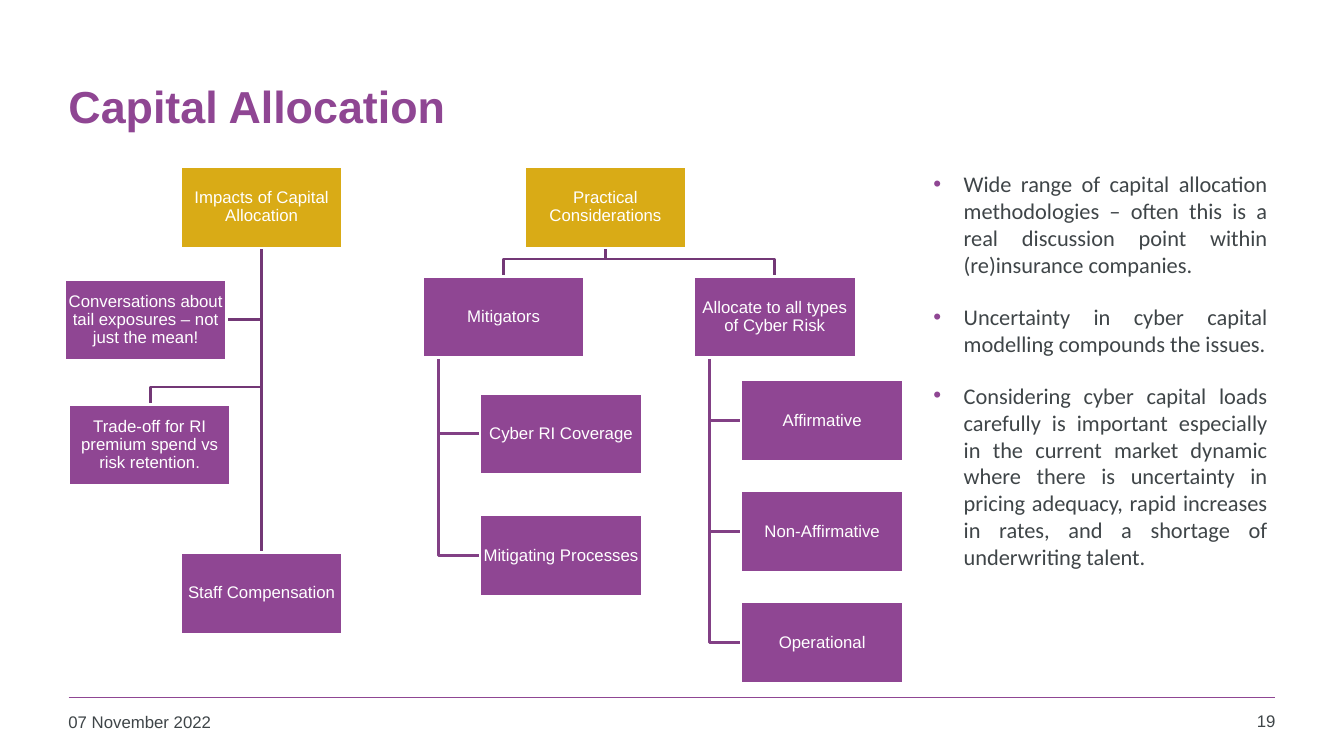
from lxml.etree import SubElement
from pptx import Presentation
from pptx.dml.color import RGBColor
from pptx.enum.shapes import MSO_CONNECTOR, MSO_SHAPE
from pptx.enum.text import MSO_ANCHOR, PP_ALIGN
from pptx.oxml.ns import qn
from pptx.util import Pt

PX = 9144
BOX_W, BOX_H = 161, 81
PURPLE, GOLD, WHITE, INK = "8F4693", "D9AB16", "FFFFFF", "3F4548"
BRANCH, TWIG = "733876", "824085"


def px(n):
    return n * PX


def rgb(color):
    return RGBColor.from_string(color)


class Deck:
    font = "Arial"

    def __init__(self, width, height):
        self.prs = Presentation()
        self.prs.slide_width, self.prs.slide_height = px(width), px(height)
        self.s = self.prs.slides.add_slide(self.prs.slide_layouts[6])

    def style(self, p, size, color, bold=False, font=None):
        for r in p.runs:
            r.font.name = font or self.font
            r.font.size = Pt(size)
            r.font.bold = bold
            r.font.color.rgb = rgb(color)

    def frame(self, x, y, w, h):
        tf = self.s.shapes.add_textbox(px(x), px(y), px(w), px(h)).text_frame
        tf.word_wrap = True
        return tf

    def text(self, x, y, w, h, text, size, color, bold=False,
             align=PP_ALIGN.LEFT, anchor=MSO_ANCHOR.TOP):
        tf = self.frame(x, y, w, h)
        tf.text = text
        tf.vertical_anchor = anchor
        p = tf.paragraphs[0]
        p.alignment = align
        self.style(p, size, color, bold)

    def bullets(self, x, y, w, h, items):
        tf = self.frame(x, y, w, h)
        for i, item in enumerate(items):
            p = tf.add_paragraph() if i else tf.paragraphs[0]
            p.text = item
            p.alignment = PP_ALIGN.JUSTIFY
            p.space_before = Pt(12 if i else 0)
            p.space_after = Pt(6)
            pPr = p._p.get_or_add_pPr()
            pPr.set("marL", str(px(30)))
            pPr.set("indent", str(px(-30)))
            buClr = SubElement(pPr, qn("a:buClr"))
            SubElement(buClr, qn("a:srgbClr"), val=PURPLE)
            SubElement(pPr, qn("a:buFont"), typeface="Arial")
            SubElement(pPr, qn("a:buChar"), char="•")
            self.style(p, 16, INK, font="Calibri")

    def box(self, x, y, text, fill=PURPLE):
        sp = self.s.shapes.add_shape(MSO_SHAPE.RECTANGLE, px(x), px(y), px(BOX_W), px(BOX_H))
        sp.shadow.inherit = False
        sp.fill.solid()
        sp.fill.fore_color.rgb = rgb(fill)
        sp.line.color.rgb = rgb(WHITE)
        sp.line.width = Pt(2)
        tf = sp.text_frame
        tf.margin_left = tf.margin_right = tf.margin_top = tf.margin_bottom = px(1)
        tf.word_wrap = True
        tf.vertical_anchor = MSO_ANCHOR.MIDDLE
        tf.text = text
        p = tf.paragraphs[0]
        p.alignment = PP_ALIGN.CENTER
        p.line_spacing = 0.9
        self.style(p, 12, WHITE)
        return sp

    def to_back(self, sp):
        self.s.shapes._spTree.insert(2, sp._element)

    def elbow(self, points, color):
        builder = self.s.shapes.build_freeform(*points[0], scale=PX)
        builder.add_line_segments(points[1:], close=False)
        sp = builder.convert_to_shape()
        sp.shadow.inherit = False
        sp.fill.background()
        sp.line.color.rgb = rgb(color)
        sp.line.width = Pt(2)
        self.to_back(sp)

    def line(self, x1, y1, x2, y2, color, width):
        c = self.s.shapes.add_connector(MSO_CONNECTOR.STRAIGHT, px(x1), px(y1), px(x2), px(y2))
        c.line.color.rgb = rgb(color)
        c.line.width = Pt(width)
        SubElement(c._element.spPr, qn("a:effectLst"))
        return c

    def join(self, top, bottom, color):
        c = self.line(0, 0, 0, 0, color, 2)
        c.begin_connect(top, 2)
        c.end_connect(bottom, 0)
        self.to_back(c)

    def branch(self, x, y, text, children):
        self.box(x, y, text)
        trunk = x + 16
        for child_x, child_y, child in children:
            self.box(child_x, child_y, child)
            mid = child_y + BOX_H // 2
            self.elbow([(trunk, y + BOX_H), (trunk, mid), (child_x, mid)], TWIG)


def main():
    deck = Deck(1333, 750)
    deck.line(68, 692, 1265, 692, PURPLE, 1)
    deck.text(58, 42, 1209, 125, "Capital Allocation", 32, PURPLE, True, anchor=MSO_ANCHOR.MIDDLE)
    deck.text(58, 701, 294, 36, "07 November 2022", 12, INK)
    deck.text(1181, 700, 94, 37, "19", 12, INK, align=PP_ALIGN.RIGHT)

    impacts = deck.box(179, 165, "Impacts of Capital Allocation", GOLD)
    deck.box(68, 401, "Trade-off for RI premium spend vs risk retention.")
    staff = deck.box(179, 548, "Staff Compensation")
    deck.box(64, 277, "Conversations about tail exposures – not just the mean!")
    deck.join(impacts, staff, BRANCH)
    deck.elbow([(259, 245), (259, 317), (225, 317)], BRANCH)
    deck.elbow([(259, 245), (259, 384), (149, 384), (149, 401)], BRANCH)

    deck.box(520, 165, "Practical Considerations", GOLD)
    branches = [
        (419, "Mitigators", 476, 390, 121, ["Cyber RI Coverage", "Mitigating Processes"]),
        (688, "Allocate to all types of Cyber Risk", 735, 377, 110,
         ["Affirmative", "Non-Affirmative", "Operational"]),
    ]
    for x, text, child_x, top, step, names in branches:
        children = [(child_x, top + i * step, name) for i, name in enumerate(names)]
        deck.branch(x, 274, text, children)
        mid = x + BOX_W // 2
        deck.elbow([(601, 245), (601, 257), (mid, 257), (mid, 274)], BRANCH)

    deck.bullets(916, 164, 351, 485, [
        "Wide range of capital allocation methodologies – often this is a real discussion "
        "point within (re)insurance companies.",
        "Uncertainty in cyber capital modelling compounds the issues.",
        "Considering cyber capital loads carefully is important especially in the current "
        "market dynamic where there is uncertainty in pricing adequacy, rapid increases in "
        "rates, and a shortage of underwriting talent.",
    ])
    deck.prs.save("out.pptx")


if __name__ == "__main__":
    main()
